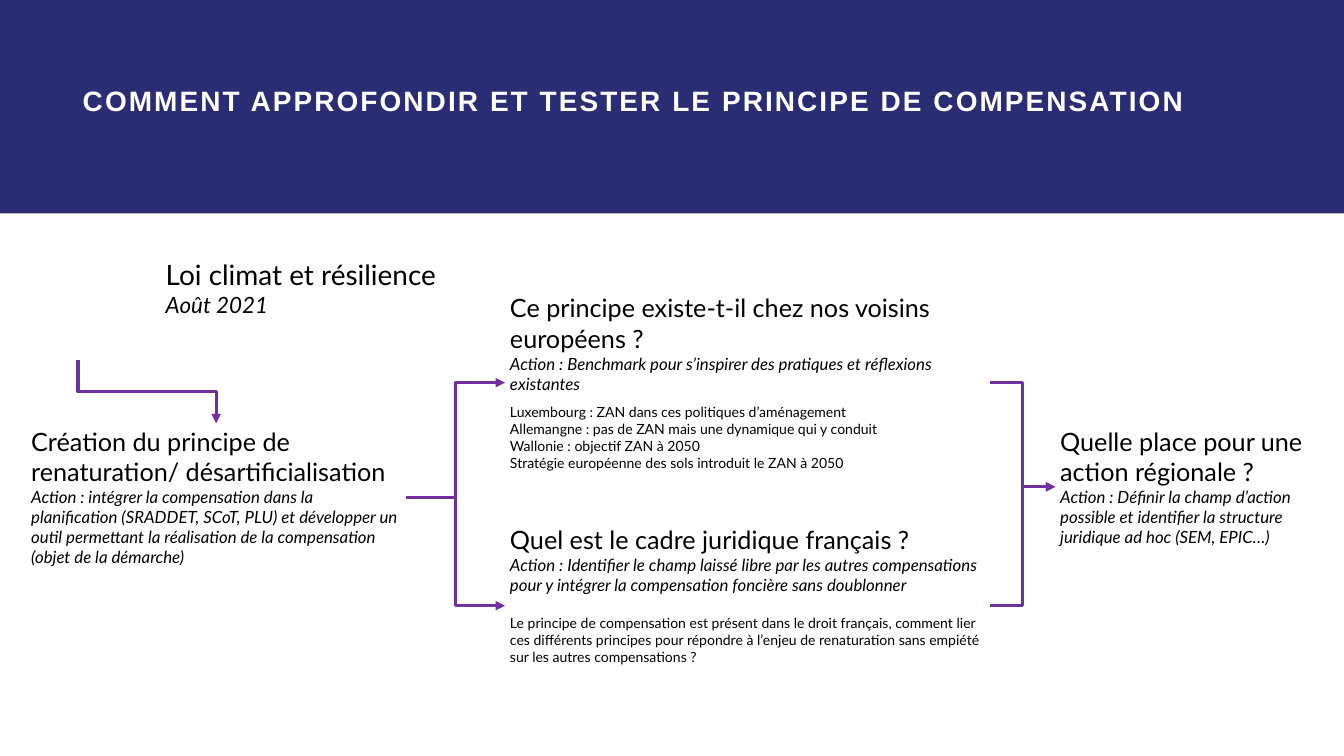
from lxml.etree import SubElement
from pptx import Presentation
from pptx.dml.color import RGBColor
from pptx.enum.shapes import MSO_CONNECTOR as Connector, MSO_SHAPE as Shape
from pptx.enum.text import MSO_ANCHOR as Anchor, MSO_AUTO_SIZE as AutoSize, PP_ALIGN as Align
from pptx.oxml.ns import qn
from pptx.util import Pt

COLORS = {"band": "2B2D74", "title": "FFFFFF", "text": "000000", "arrow": "7030A0"}
FORMATS = {
    "title": {"name": "Arial", "size": Pt(40), "bold": True},
    "law": {"name": "Lato", "size": Pt(40)},
    "date": {"name": "Lato", "size": Pt(32), "italic": True},
    "heading": {"name": "Lato", "size": Pt(36)},
    "action": {"name": "Lato", "size": Pt(24), "italic": True},
    "detail": {"name": "Lato", "size": Pt(20)},
}


def format_font(font, style, color):
    for attribute, value in FORMATS[style].items():
        setattr(font, attribute, value)
    font.color.rgb = RGBColor.from_string(COLORS[color])


def add_arrow(begin_x, begin_y, end_x, end_y):
    arrow = slide.shapes.add_connector(
        Connector.ELBOW, Pt(begin_x), Pt(begin_y), Pt(end_x), Pt(end_y))
    arrow.line.color.rgb = RGBColor.from_string(COLORS["arrow"])
    arrow.line.width = Pt(4.5)
    SubElement(arrow.line._get_or_add_ln(), qn("a:tailEnd"), type="triangle")
    SubElement(arrow.element.spPr, qn("a:effectLst"))
    return arrow


presentation = Presentation()
presentation.slide_width, presentation.slide_height = Pt(1920), Pt(1080)
slide = presentation.slides.add_slide(presentation.slide_layouts[5])

# Title on its band
title = slide.shapes.title
band = slide.shapes.add_shape(Shape.RECTANGLE, 0, 0, Pt(1920), Pt(305))
band.shadow.inherit = False
band.fill.solid()
band.fill.fore_color.rgb = RGBColor.from_string(COLORS["band"])
band.line.fill.background()
title.element.addprevious(band.element)

title.left, title.top, title.width, title.height = Pt(111), Pt(116), Pt(1699), Pt(160.5)
frame = title.text_frame
frame.text = "COMMENT APPROFONDIR ET TESTER LE PRINCIPE DE COMPENSATION"
frame.word_wrap = True
frame.auto_size = AutoSize.NONE
frame.vertical_anchor = Anchor.TOP
paragraph = frame.paragraphs[0]
paragraph.alignment = Align.LEFT
run = paragraph.runs[0]
format_font(run.font, "title", "title")
run.font._element.set("spc", "300")

# Text blocks: position, wrapping, then (style, text, space before)
blocks = {
    "law": ((229.7, 364.3, 426.2, 94.3), False, [
        ("law", "Loi climat et résilience", 0),
        ("date", "Août 2021", 0),
    ]),
    "creation": ((37.5, 604.8, 543, 211), True, [
        ("heading", "Création du principe de renaturation/ désartificialisation", 0),
        ("action", "Action : intégrer la compensation dans la planification (SRADDET, SCoT, PLU) "
                   "et développer un outil permettant la réalisation de la compensation "
                   "(objet de la démarche)", 0),
    ]),
    "europe": ((721.5, 414.7, 693.3, 264.2), True, [
        ("heading", "Ce principe existe-t-il chez nos voisins européens ?", 0),
        ("action", "Action : Benchmark pour s’inspirer des pratiques et réflexions existantes", 0),
        ("detail", "Luxembourg : ZAN dans ces politiques d’aménagement", 14.4),
        ("detail", "Allemangne : pas de ZAN mais une dynamique qui y conduit", 0),
        ("detail", "Wallonie : objectif ZAN à 2050", 0),
        ("detail", "Stratégie européenne des sols introduit le ZAN à 2050", 0),
    ]),
    "france": ((721.5, 745.4, 693.3, 239.8), True, [
        ("heading", "Quel est le cadre juridique français ?", 0),
        ("action", "Action : Identifier le champ laissé libre par les autres compensations pour y "
                   "intégrer la compensation foncière sans doublonner", 0),
        ("detail", "Le principe de compensation est présent dans le droit français, comment lier "
                   "ces différents principes pour répondre à l’enjeu de renaturation sans empiété "
                   "sur les autres compensations ?", 28.8),
    ]),
    "region": ((1507.5, 604.8, 412.5, 181.4), True, [
        ("heading", "Quelle place pour une action régionale ?", 0),
        ("action", "Action : Définir la champ d’action possible et identifier la structure "
                   "juridique ad hoc (SEM, EPIC…)", 0),
    ]),
}
boxes = {}
for name, (position, wrap, lines) in blocks.items():
    box = boxes[name] = slide.shapes.add_textbox(*map(Pt, position))
    frame = box.text_frame
    frame.word_wrap = wrap
    frame.auto_size = AutoSize.NONE
    for index, (style, text, space) in enumerate(lines):
        paragraph = frame.add_paragraph() if index else frame.paragraphs[0]
        run = paragraph.add_run()
        run.text = text
        format_font(run.font, style, "text")
        if space:
            paragraph.space_before = Pt(space)

# Arrow from the law down to the principle, turned to leave vertically
law_arrow = add_arrow(255.5, 460.8, 164.8, 658.1)
law_arrow.element.spPr.find(qn("a:xfrm")).set("rot", str(270 * 60000))

# Arrows between blocks, from right side to left side
for source, target in (("creation", "europe"), ("creation", "france"),
                       ("europe", "region"), ("france", "region")):
    arrow = add_arrow(0, 0, 0, 0)
    arrow.begin_connect(boxes[source], 3)
    arrow.end_connect(boxes[target], 1)

presentation.save("out.pptx")
